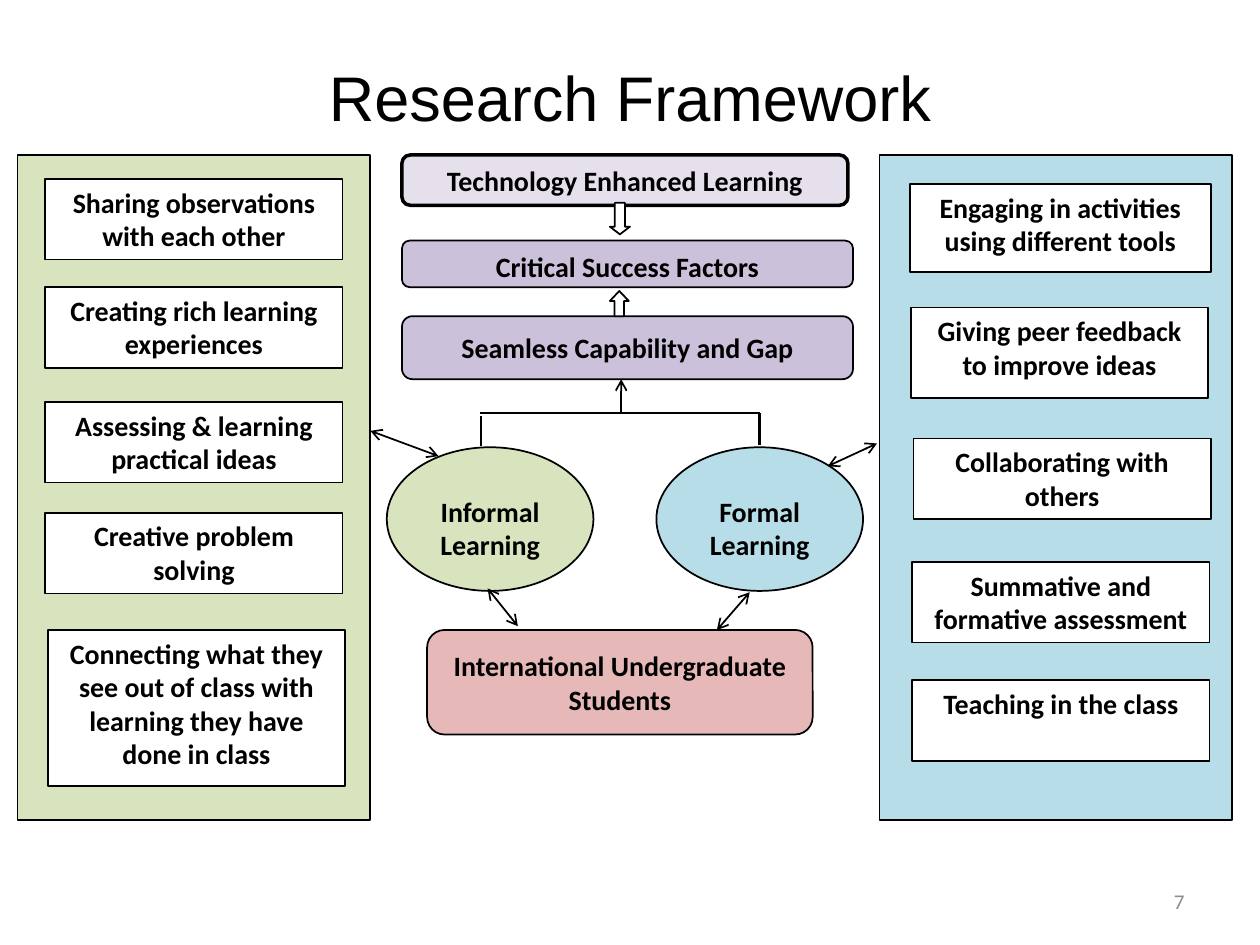
"""Build the Research Framework slide."""
from dataclasses import dataclass
from typing import Optional

from lxml.etree import SubElement
from pptx import Presentation
from pptx.dml.color import RGBColor
from pptx.enum.shapes import MSO_CONNECTOR, MSO_SHAPE
from pptx.enum.text import MSO_ANCHOR, PP_ALIGN
from pptx.oxml.ns import qn
from pptx.util import Inches, Pt

BLACK = RGBColor(0x00, 0x00, 0x00)
WHITE = RGBColor(0xFF, 0xFF, 0xFF)
GRAY = RGBColor(0x8C, 0x8C, 0x8C)
GREEN = RGBColor(0xD7, 0xE4, 0xBD)
BLUE = RGBColor(0xB7, 0xDE, 0xE8)
PINK = RGBColor(0xE6, 0xB9, 0xB8)
LILAC = RGBColor(0xE6, 0xE0, 0xEC)
PURPLE = RGBColor(0xCC, 0xC1, 0xDA)


@dataclass
class Box:
    left: float
    top: float
    width: float
    height: float
    text: str = ""
    fill: RGBColor = WHITE
    kind: MSO_SHAPE = MSO_SHAPE.RECTANGLE
    anchor: MSO_ANCHOR = MSO_ANCHOR.MIDDLE
    line_width: float = 1
    margin_top: float = 0.05
    head_ratio: Optional[float] = None


@dataclass
class Link:
    start: tuple[float, float]
    end: tuple[float, float]
    arrows: tuple[str, ...] = ()
    width: float = 1


def activity(left: float, top: float, text: str, width: float = 2.36, height: float = 0.64) -> Box:
    """Describe a white activity box with text at its top."""
    return Box(left, top, width, height, text, anchor=MSO_ANCHOR.TOP)


PANELS = [Box(0.14, 1.23, 2.8, 5.28, fill=GREEN), Box(6.98, 1.23, 2.8, 5.28, fill=BLUE)]

FRAMEWORK = [
    Box(3.19, 1.23, 3.54, 0.4, "Technology Enhanced Learning", LILAC,
        MSO_SHAPE.ROUNDED_RECTANGLE, line_width=2),
    Box(3.19, 1.91, 3.58, 0.37, "Critical Success Factors", PURPLE,
        MSO_SHAPE.ROUNDED_RECTANGLE, MSO_ANCHOR.TOP),
    Box(3.19, 2.51, 3.58, 0.5, "Seamless Capability and Gap", PURPLE,
        MSO_SHAPE.ROUNDED_RECTANGLE),
    Box(3.39, 5, 3.06, 0.83, "International Undergraduate Students", PINK,
        MSO_SHAPE.ROUNDED_RECTANGLE),
    Box(3.07, 3.55, 1.64, 1.14, "Informal\nLearning", GREEN, MSO_SHAPE.OVAL, margin_top=0.19),
    Box(5.21, 3.55, 1.64, 1.14, "Formal\nLearning", BLUE, MSO_SHAPE.OVAL, margin_top=0.19),
    Box(4.84, 1.61, 0.16, 0.25, kind=MSO_SHAPE.DOWN_ARROW, head_ratio=0.38),
    Box(4.84, 2.31, 0.15, 0.2, kind=MSO_SHAPE.UP_ARROW, head_ratio=0.53),
]

ACTIVITIES = [
    activity(0.36, 1.42, "Sharing observations with each other"),
    activity(0.36, 2.28, "Creating rich learning experiences"),
    activity(0.36, 3.19, "Assessing & learning practical ideas"),
    activity(0.36, 4.07, "Creative problem solving"),
    activity(0.38, 5, "Connecting what they see out of class with learning they have done in class",
             height=1.24),
    activity(7.22, 1.46, "Engaging in activities using different tools", 2.39, 0.7),
    activity(7.23, 2.44, "Giving peer feedback to improve ideas", height=0.72),
    activity(7.25, 3.48, "Collaborating with others"),
    activity(7.24, 4.46, "Summative and formative assessment"),
    activity(7.24, 5.4, "Teaching in the class"),
]

BOTH = ("headEnd", "tailEnd")
LINKS = [
    Link((6.03, 3.28), (3.81, 3.28)),
    Link((3.82, 3.3), (3.82, 3.54)),
    Link((6.03, 3.28), (6.03, 3.53), width=1.5),
    Link((4.93, 3.27), (4.93, 3.01), ("tailEnd",)),
    Link((3.87, 4.67), (4.11, 4.97), BOTH),
    Link((5.95, 4.7), (5.69, 5), BOTH),
    Link((3.48, 3.62), (2.94, 3.42), BOTH),
    Link((6.96, 3.52), (6.57, 3.7), BOTH),
]


def write_text(frame, text: str, *, size: float = 16, font: str = "Calibri",
               color: RGBColor = BLACK, bold: bool = False,
               align: PP_ALIGN = PP_ALIGN.CENTER,
               anchor: MSO_ANCHOR = MSO_ANCHOR.MIDDLE) -> None:
    """Fill a text frame with one paragraph per line of text."""
    frame.word_wrap = True
    frame.vertical_anchor = anchor
    for index, line in enumerate(text.split("\n")):
        para = frame.add_paragraph() if index else frame.paragraphs[0]
        para.alignment = align
        span = para.add_run()
        span.text = line
        span.font.name = font
        span.font.size = Pt(size)
        span.font.bold = bold
        span.font.color.rgb = color


def draw_box(page, box: Box) -> None:
    """Draw a preset shape with its optional text."""
    shape = page.shapes.add_shape(box.kind, Inches(box.left), Inches(box.top),
                                  Inches(box.width), Inches(box.height))
    shape.shadow.inherit = False
    shape.fill.solid()
    shape.fill.fore_color.rgb = box.fill
    shape.line.color.rgb = BLACK
    shape.line.width = Pt(box.line_width)
    if box.head_ratio is not None:
        shape.adjustments[1] = box.head_ratio
    if box.text:
        shape.text_frame.margin_top = Inches(box.margin_top)
        write_text(shape.text_frame, box.text, bold=True, anchor=box.anchor)


def draw_link(page, link: Link) -> None:
    """Draw a straight connector with its open arrowheads."""
    points = [Inches(value) for value in (*link.start, *link.end)]
    connector = page.shapes.add_connector(MSO_CONNECTOR.STRAIGHT, *points)
    connector.line.color.rgb = BLACK
    connector.line.width = Pt(link.width)
    for end in link.arrows:
        SubElement(connector.line._get_or_add_ln(), qn(f"a:{end}"), type="arrow")
    SubElement(connector._element.spPr, qn("a:effectLst"))


def main() -> None:
    """Assemble and save the deck."""
    deck = Presentation()
    deck.slide_width, deck.slide_height = Inches(10), Inches(7.5)
    page = deck.slides.add_slide(deck.slide_layouts[5])

    title = page.shapes.title
    title.left, title.top = Inches(0.5), Inches(0.3)
    title.width, title.height = Inches(9), Inches(0.93)
    write_text(title.text_frame, "Research Framework", size=36, font="Arial")

    for box in PANELS + FRAMEWORK + ACTIVITIES:
        draw_box(page, box)
    for link in LINKS:
        draw_link(page, link)

    number = page.shapes.add_textbox(Inches(7.17), Inches(6.95), Inches(2.33), Inches(0.4))
    write_text(number.text_frame, "7", size=12, color=GRAY, align=PP_ALIGN.RIGHT)

    deck.save("out.pptx")


if __name__ == "__main__":
    main()
